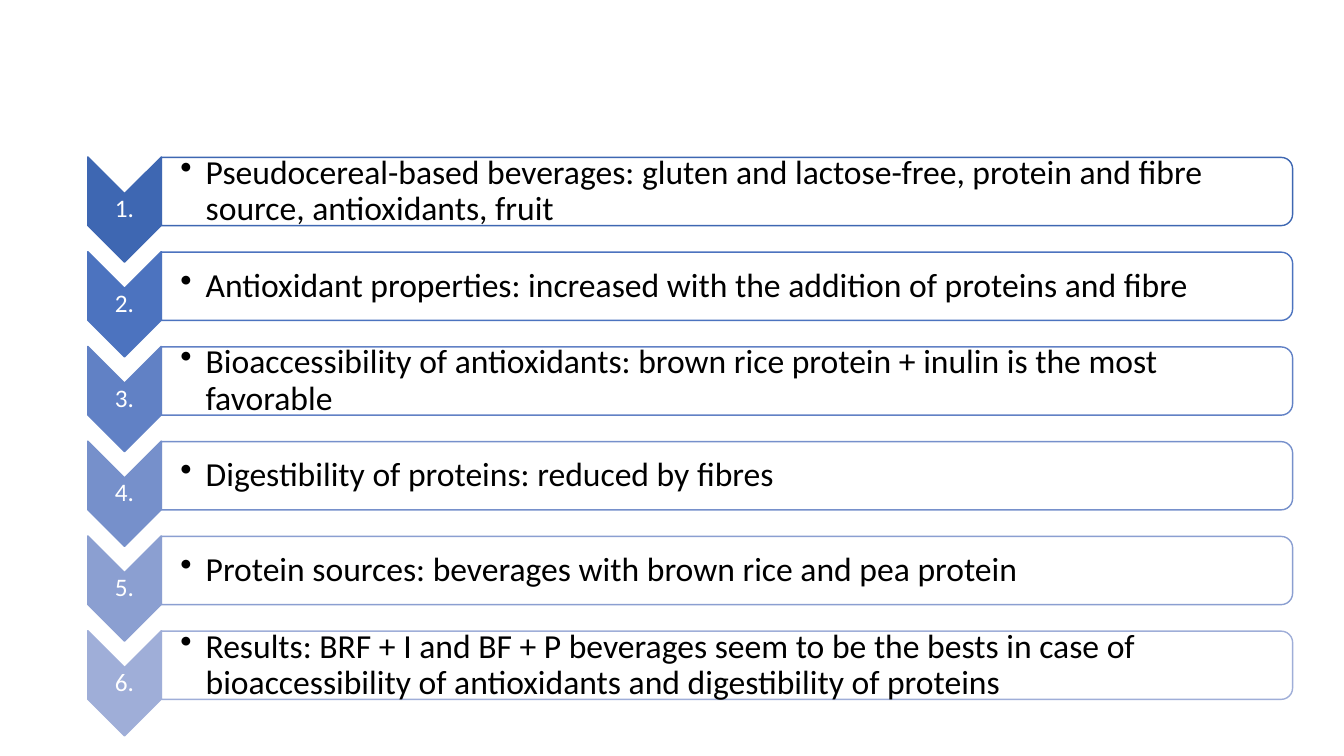
from lxml.etree import SubElement
from pptx import Presentation
from pptx.dml.color import RGBColor
from pptx.enum.shapes import MSO_SHAPE
from pptx.enum.text import MSO_ANCHOR, PP_ALIGN
from pptx.oxml.ns import qn
from pptx.util import Inches, Pt

FINDINGS = [
    ("3E67B2", "Pseudocereal-based beverages: gluten and lactose-free, "
               "protein and fibre source, antioxidants, fruit"),
    ("4C73BF", "Antioxidant properties: increased with the addition of proteins and fibre"),
    ("6181C5", "Bioaccessibility of antioxidants: brown rice protein + inulin is the most favorable"),
    ("7690CB", "Digestibility of proteins: reduced by fibres"),
    ("8B9FD1", "Protein sources: beverages with brown rice and pea protein"),
    ("9FAED8", "Results: BRF + I and BF + P beverages seem to be the bests in case of "
               "bioaccessibility of antioxidants and digestibility of proteins"),
]
BAR_COLUMNS = 15.37
TEXT_COLUMNS = 15.32
CHEVRON_DROP = 0.19


def colour(value):
    return RGBColor.from_string(value)


class ChevronList:
    """One column is a chevron's width; row n is centred on the nth bar."""

    font = "Calibri"
    left, column = 0.87, 0.73
    top, row = 1.9, 0.94

    def __init__(self, page):
        self.shapes = page.shapes.add_group_shape().shapes

    def frame(self, col, row, columns, rows, turned=False):
        """Return left, top, width, height for an area centred on a grid point."""
        width, height = columns * self.column, rows * self.row
        if turned:
            width, height = height, width
        x = self.left + col * self.column
        y = self.top + row * self.row
        return [Inches(v) for v in (x - width / 2, y - height / 2, width, height)]

    def turned_shape(self, kind, area, fill, line, opacity=100):
        """Add a preset shape turned clockwise by a quarter."""
        shape = self.shapes.add_shape(kind, *self.frame(*area, turned=True))
        shape.rotation = 90
        shape.shadow.inherit = False
        shape.fill.solid()
        shape.fill.fore_color.rgb = colour(fill)
        shape.line.color.rgb = colour(line)
        shape.line.width = Pt(1)
        if opacity < 100:
            solid = shape.fill.fore_color._xFill
            SubElement(solid[0], qn("a:alpha"), val=str(opacity * 1000))

    def text(self, area, words, size, ink, inset, left_inset=None, bullet=False):
        box = self.shapes.add_textbox(*self.frame(*area))
        body = box.text_frame
        body.word_wrap = True
        body.vertical_anchor = MSO_ANCHOR.MIDDLE
        body.margin_top = body.margin_bottom = body.margin_right = Inches(inset)
        body.margin_left = Inches(inset if left_inset is None else left_inset)
        para = body.paragraphs[0]
        para.line_spacing = 0.9
        para.alignment = PP_ALIGN.LEFT if bullet else PP_ALIGN.CENTER
        if bullet:
            para.level = 1
            properties = para._p.get_or_add_pPr()
            properties.set("marL", str(Inches(0.25)))
            properties.set("indent", str(-Inches(0.25)))
            SubElement(properties, qn("a:buChar"), char="•")
        span = para.add_run()
        span.text = words
        span.font.name = self.font
        span.font.size = Pt(size)
        span.font.color.rgb = colour(ink)

    def finding(self, index, tint, words):
        """Add a numbered chevron with its bar and bullet."""
        marker_row = index + CHEVRON_DROP
        bar_centre = 1 + BAR_COLUMNS / 2
        text_centre = 1 + TEXT_COLUMNS / 2
        self.turned_shape(MSO_SHAPE.CHEVRON, (0.5, marker_row, 1, 1.11), tint, tint)
        self.text((0.5, marker_row, 1, 0.33), f"{index + 1}.", 18, "FFFFFF", 0.01)
        self.turned_shape(MSO_SHAPE.ROUND_2_SAME_RECTANGLE,
                          (bar_centre, index, BAR_COLUMNS, 0.72), "FFFFFF", tint, opacity=90)
        self.text((text_centre, index, TEXT_COLUMNS, 0.65), words, 24, "000000",
                  0.02, left_inset=0.19, bullet=True)


def main():
    deck = Presentation()
    deck.slide_width, deck.slide_height = Inches(13.33), Inches(7.5)
    page = deck.slides.add_slide(deck.slide_layouts[6])
    conclusions = ChevronList(page)
    for index, (tint, words) in enumerate(FINDINGS):
        conclusions.finding(index, tint, words)
    deck.save("out.pptx")


if __name__ == "__main__":
    main()
